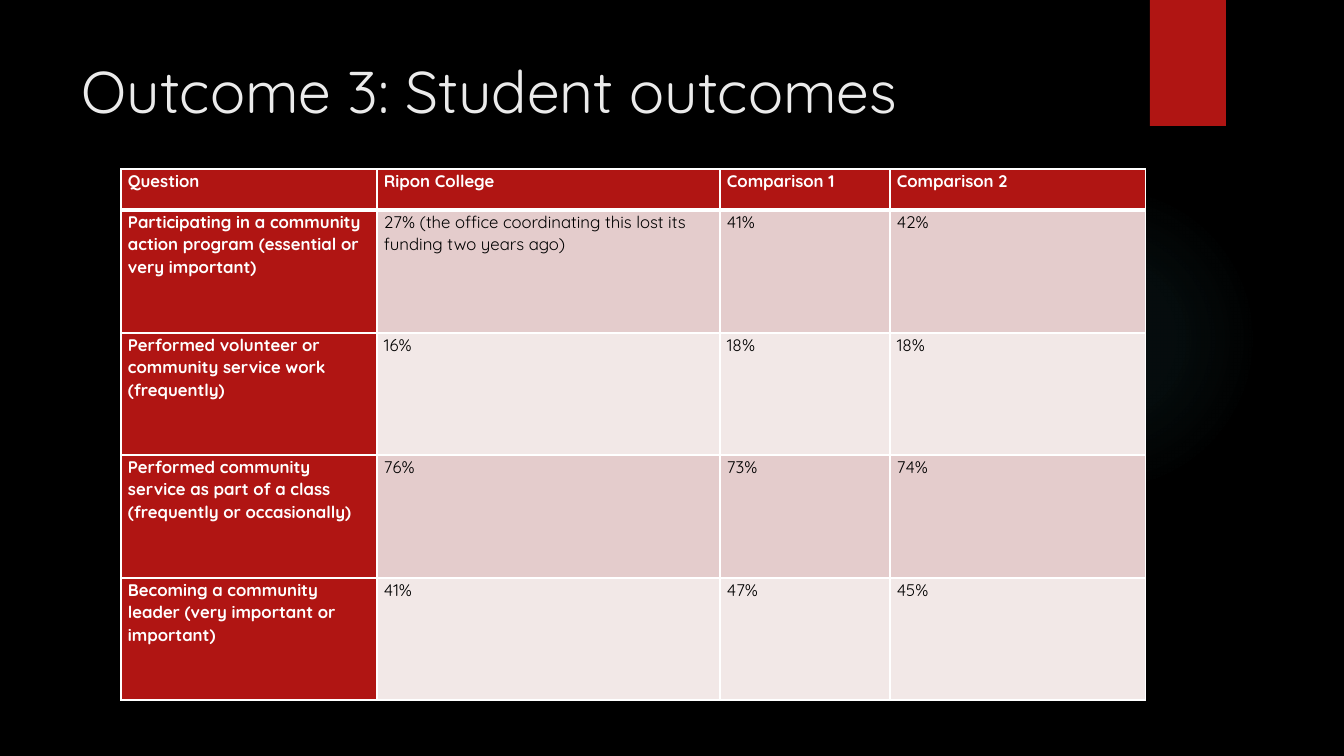
from lxml import etree
from pptx import Presentation
from pptx.dml.color import RGBColor
from pptx.enum.shapes import MSO_SHAPE
from pptx.enum.text import MSO_ANCHOR
from pptx.oxml import parse_xml
from pptx.oxml.ns import nsdecls, qn
from pptx.util import Emu, Pt

OVAL, RECT, TOP = MSO_SHAPE.OVAL, MSO_SHAPE.RECTANGLE, MSO_ANCHOR.TOP

TITLE = "Outcome 3: Student outcomes"
ROWS = [
    ("Question", "Ripon College", "Comparison 1", "Comparison 2"),
    ("Participating in a community action program (essential or very important)",
     "27% (the office coordinating this lost its funding two years ago)", "41%", "42%"),
    ("Performed volunteer or community service work (frequently)", "16%", "18%", "18%"),
    ("Performed community service as part of a class (frequently or occasionally)",
     "76%", "73%", "74%"),
    ("Becoming a community leader (very important or important)", "41%", "47%", "45%"),
]
COLORS = {"back": "000000", "red": "B01513", "title": "EBEBEB", "white": "FFFFFF",
          "text": "000000", "odd": "E4CCCC", "even": "F2E8E7", "glow": "50B9C1"}
FONT = "Quicksand"
TITLE_FONT = {"name": FONT, "size": Pt(42), "bold": False}
CELL_FONT = {"name": FONT, "size": Pt(12)}
GLOW_STOPS = [(0, 7), (36, 6), (69, 0)]
COL_WIDTHS = [256, 343, 170, 256]
ROW_HEIGHTS = [41, 123, 122, 123, 122]
GLOW_BOX = (949, 184, 310, 310)
TAB_BOX = (1150, 0, 76, 126)
TITLE_BOX = (72, 50, 1037, 154)
TABLE_BOX = (121, 169, sum(COL_WIDTHS), sum(ROW_HEIGHTS))


def px(n):
    return Emu(round(n * 914400 / 100.8))


def box(values):
    return [px(v) for v in values]


def rgb(key):
    return RGBColor.from_string(COLORS[key])


def style(font, color, **formats):
    for name, value in formats.items():
        setattr(font, name, value)
    font.color.rgb = rgb(color)


def add_glow(s):
    sp = s.shapes.add_shape(OVAL, *box(GLOW_BOX))
    sp.shadow.inherit = False
    sp.line.fill.background()
    sp.fill.background()
    stops = "".join(
        f'<a:gs pos="{pos * 1000}"><a:srgbClr val="{COLORS["glow"]}">'
        f'<a:alpha val="{alpha * 1000}"/></a:srgbClr></a:gs>' for pos, alpha in GLOW_STOPS)
    gradient = parse_xml(
        f'<a:gradFill {nsdecls("a")} rotWithShape="1"><a:gsLst>{stops}</a:gsLst>'
        '<a:path path="circle"><a:fillToRect l="50000" t="50000" r="50000" b="50000"/>'
        '</a:path></a:gradFill>')
    props = sp.fill._xPr
    props.replace(props.find(qn("a:noFill")), gradient)


def add_tab(s):
    sp = s.shapes.add_shape(RECT, *box(TAB_BOX))
    sp.shadow.inherit = False
    sp.line.fill.background()
    sp.fill.solid()
    sp.fill.fore_color.rgb = rgb("red")
    effects = sp._element.spPr.find(qn("a:effectLst"))
    effects.append(parse_xml(
        f'<a:outerShdw {nsdecls("a")} blurRad="{Pt(3)}" dist="{Pt(2)}" dir="5400000" '
        'rotWithShape="0"><a:srgbClr val="000000"><a:alpha val="45000"/></a:srgbClr>'
        '</a:outerShdw>'))


def add_title(s):
    tf = s.shapes.add_textbox(*box(TITLE_BOX)).text_frame
    tf.word_wrap = True
    tf.vertical_anchor = TOP
    r = tf.paragraphs[0].add_run()
    r.text = TITLE
    style(r.font, "title", **TITLE_FONT)


def add_borders(cell, widths):
    props = cell._tc.get_or_add_tcPr()
    for i, (side, width) in enumerate(widths.items()):
        line = etree.Element(qn(f"a:ln{side}"), w=str(Pt(width)))
        fill = etree.SubElement(line, qn("a:solidFill"))
        etree.SubElement(fill, qn("a:srgbClr"), val=COLORS["white"])
        props.insert(i, line)


def fill_cell(cell, text, row, col):
    heading = row == 0 or col == 0
    cell.margin_left = cell.margin_right = px(7)
    cell.margin_top = cell.margin_bottom = 0
    cell.fill.solid()
    cell.fill.fore_color.rgb = rgb("red" if heading else "odd" if row % 2 else "even")
    add_borders(cell, {"L": 1, "R": 1, "T": 3 if row == 1 else 1, "B": 3 if row == 0 else 1})
    p = cell.text_frame.paragraphs[0]
    p.line_spacing = 1.07
    r = p.add_run()
    r.text = text
    style(r.font, "white" if heading else "text", bold=heading, **CELL_FONT)


def add_results(s):
    table = s.shapes.add_table(len(ROWS), len(COL_WIDTHS), *box(TABLE_BOX)).table
    for column, width in zip(table.columns, COL_WIDTHS):
        column.width = px(width)
    for i, (row, height) in enumerate(zip(ROWS, ROW_HEIGHTS)):
        table.rows[i].height = px(height)
        for j, text in enumerate(row):
            fill_cell(table.cell(i, j), text, i, j)


def main():
    prs = Presentation()
    prs.slide_width, prs.slide_height = px(1344), px(756)
    s = prs.slides.add_slide(prs.slide_layouts[6])
    s.background.fill.solid()
    s.background.fill.fore_color.rgb = rgb("back")
    add_glow(s)
    add_tab(s)
    add_title(s)
    add_results(s)
    prs.save("out.pptx")


if __name__ == "__main__":
    main()
